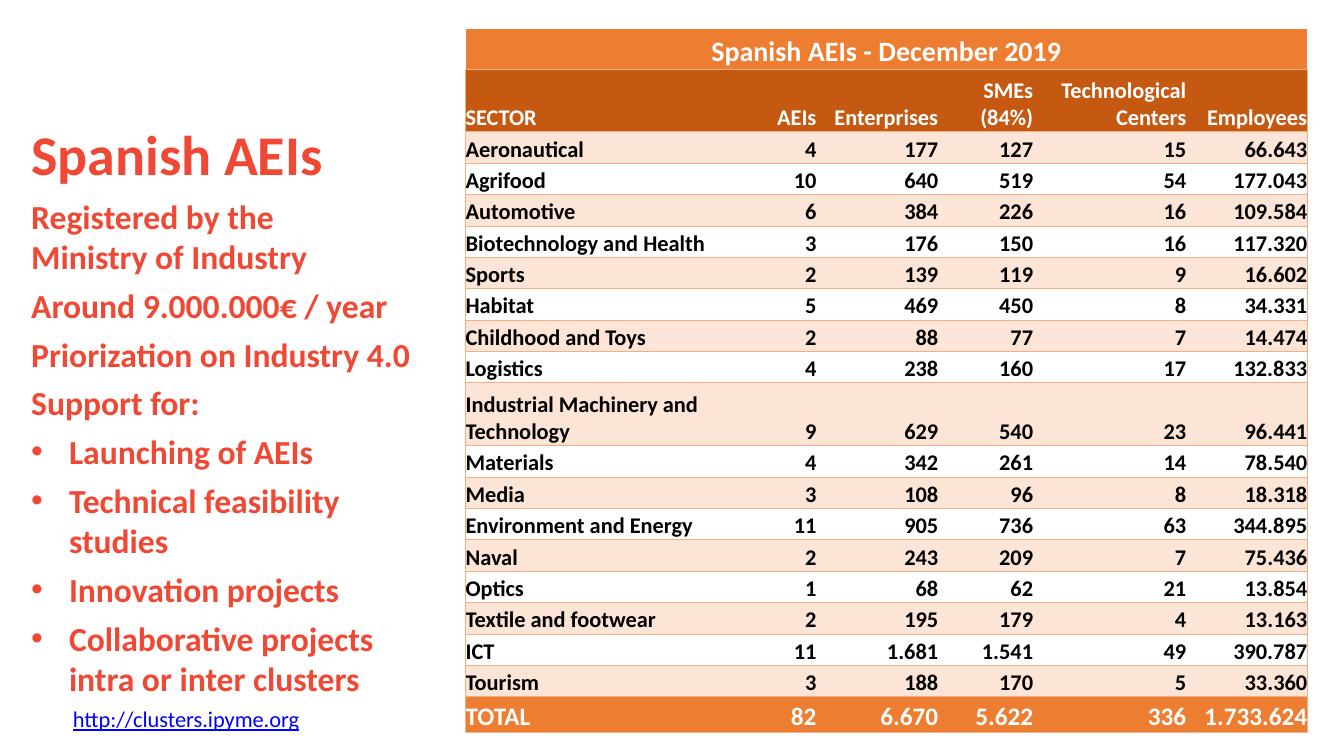
from dataclasses import dataclass

from pptx import Presentation
from pptx.dml.color import RGBColor as RGB
from pptx.enum.text import MSO_ANCHOR as Anchor, MSO_AUTO_SIZE as Fit, PP_ALIGN as Align
from pptx.oxml import parse_xml
from pptx.oxml.ns import nsdecls, qn
from pptx.util import Pt


@dataclass(frozen=True)
class Theme:
    face: str = "Calibri"
    red: str = "EF4834"
    orange: str = "ED7D31"
    rust: str = "C65911"
    peach: str = "FCE4D6"
    rule: str = "F4B084"
    white: str = "FFFFFF"
    black: str = "000000"
    blue: str = "0000FF"
    title: int = 40
    body: int = 24
    head: int = 20
    total: int = 18
    cell: int = 16


T = Theme()
NO_STYLE = "{2D5ABB26-0587-4C30-8999-92F81FD0307C}"

LINES = ["Registered by the\vMinistry of Industry", "Around 9.000.000€ / year",
         "Priorization on Industry 4.0", "Support for:"]
ITEMS = ["Launching of AEIs", "Technical feasibility studies", "Innovation projects",
         "Collaborative projects intra or inter clusters"]

WIDTHS = [203, 47.6, 87, 67.8, 109.4, 86.4]
LINE = 22.45
ROWS = [
    ("Spanish AEIs - December 2019",),
    ("SECTOR", "AEIs", "Enterprises", "SMEs (84%)", "Technological Centers", "Employees"),
    ("Aeronautical", "4", "177", "127", "15", "66.643"),
    ("Agrifood", "10", "640", "519", "54", "177.043"),
    ("Automotive", "6", "384", "226", "16", "109.584"),
    ("Biotechnology and Health", "3", "176", "150", "16", "117.320"),
    ("Sports", "2", "139", "119", "9", "16.602"),
    ("Habitat", "5", "469", "450", "8", "34.331"),
    ("Childhood and Toys", "2", "88", "77", "7", "14.474"),
    ("Logistics", "4", "238", "160", "17", "132.833"),
    ("Industrial Machinery and Technology", "9", "629", "540", "23", "96.441"),
    ("Materials", "4", "342", "261", "14", "78.540"),
    ("Media", "3", "108", "96", "8", "18.318"),
    ("Environment and Energy", "11", "905", "736", "63", "344.895"),
    ("Naval", "2", "243", "209", "7", "75.436"),
    ("Optics", "1", "68", "62", "21", "13.854"),
    ("Textile and footwear", "2", "195", "179", "4", "13.163"),
    ("ICT", "11", "1.681", "1.541", "49", "390.787"),
    ("Tourism", "3", "188", "170", "5", "33.360"),
    ("TOTAL", "82", "6.670", "5.622", "336", "1.733.624"),
]
LAST = len(ROWS) - 1
HEIGHTS = {0: 28.4, 1: 2 * LINE, 10: 2 * LINE, LAST: 25.4}


def style(para, size, color, bold=True):
    font = para.font
    font.name, font.size, font.bold = T.face, Pt(size), bold
    font.color.rgb = RGB.from_string(color)


def place(shape, x, y, w, h):
    shape.left, shape.top, shape.width, shape.height = Pt(x), Pt(y), Pt(w), Pt(h)


def add_bullet(para, indent):
    props = para._p.get_or_add_pPr()
    props.set("marL", str(Pt(indent)))
    props.set("indent", str(-Pt(indent)))
    props.append(parse_xml(f'<a:buFont {nsdecls("a")} typeface="Arial"/>'))
    props.append(parse_xml(f'<a:buChar {nsdecls("a")} char="•"/>'))


def add_panel(slide, x, y, w, h):
    """Title, statements and bulleted support list."""
    title, drop = slide.shapes.title, 54.8
    place(title, x, y, w, drop)
    frame = title.text_frame
    frame.text = "Spanish AEIs"
    frame.vertical_anchor, frame.auto_size = Anchor.TOP, Fit.NONE
    para = frame.paragraphs[0]
    para.alignment, para.line_spacing = Align.LEFT, 1.0
    style(para, T.title, T.red)

    frame = slide.shapes.add_textbox(Pt(x), Pt(y + drop), Pt(w), Pt(h - drop)).text_frame
    frame.word_wrap = True
    for i, text in enumerate(LINES + ITEMS):
        para = frame.add_paragraph() if i else frame.paragraphs[0]
        para.text = text
        if i:
            para.space_before = Pt(6)
        if i >= len(LINES):
            add_bullet(para, 27)
        style(para, T.body, T.red)


def add_link(slide, x, y, w, h):
    frame = slide.shapes.add_textbox(Pt(x), Pt(y), Pt(w), Pt(h)).text_frame
    frame.word_wrap = False
    para = frame.paragraphs[0]
    para.text = "http://clusters.ipyme.org"
    style(para, T.cell, T.blue, bold=False)
    para.font.underline = True


def add_rules(cell, sides):
    props = cell._tc.get_or_add_tcPr()
    for side in sides:
        props.append(parse_xml(
            f'<a:ln{side} {nsdecls("a")} w="{Pt(0.5)}"><a:solidFill>'
            f'<a:srgbClr val="{T.rule}"/></a:solidFill></a:ln{side}>'))


def row_look(r):
    """Fill, text colour and text size of a row."""
    if r == 0:
        return T.orange, T.white, T.head
    if r == 1:
        return T.rust, T.white, T.cell
    if r == LAST:
        return T.orange, T.white, T.total
    return (None if r % 2 else T.peach), T.black, T.cell


def fill_cell(cell, text, look, align, sides):
    fill, color, size = look
    cell.margin_left = cell.margin_right = cell.margin_top = cell.margin_bottom = 0
    cell.vertical_anchor = Anchor.BOTTOM
    add_rules(cell, sides)
    if fill:
        cell.fill.solid()
        cell.fill.fore_color.rgb = RGB.from_string(fill)
    else:
        cell.fill.background()
    cell.text = text
    para = cell.text_frame.paragraphs[0]
    para.alignment = align
    style(para, size, color)


def add_sectors(slide, x, y):
    heights = [HEIGHTS.get(r, LINE) for r in range(len(ROWS))]
    table = slide.shapes.add_table(len(ROWS), len(WIDTHS), Pt(x), Pt(y),
                                   Pt(sum(WIDTHS)), Pt(sum(heights))).table
    table.first_row = table.horz_banding = False
    table._tbl.tblPr.find(qn("a:tableStyleId")).text = NO_STYLE
    for col, width in zip(table.columns, WIDTHS):
        col.width = Pt(width)
    table.cell(0, 0).merge(table.cell(0, len(WIDTHS) - 1))
    for r, (row, height) in enumerate(zip(ROWS, heights)):
        table.rows[r].height = Pt(height)
        for c, text in enumerate(row):
            if r == 0:
                align, sides = Align.CENTER, "B"
            else:
                align = Align.RIGHT if c else Align.LEFT
                sides = {0: "LTB", len(WIDTHS) - 1: "RTB"}.get(c, "TB")
            fill_cell(table.cell(r, c), text, row_look(r), align, sides)


def main():
    deck = Presentation()
    deck.slide_width, deck.slide_height = Pt(960), Pt(540)
    slide = deck.slides.add_slide(deck.slide_layouts[5])
    add_sectors(slide, 332.6, 20.8)
    add_panel(slide, 15.2, 81.4, 306, 425.6)
    add_link(slide, 45, 500.4, 180, 26.6)
    deck.save("out.pptx")


if __name__ == "__main__":
    main()
